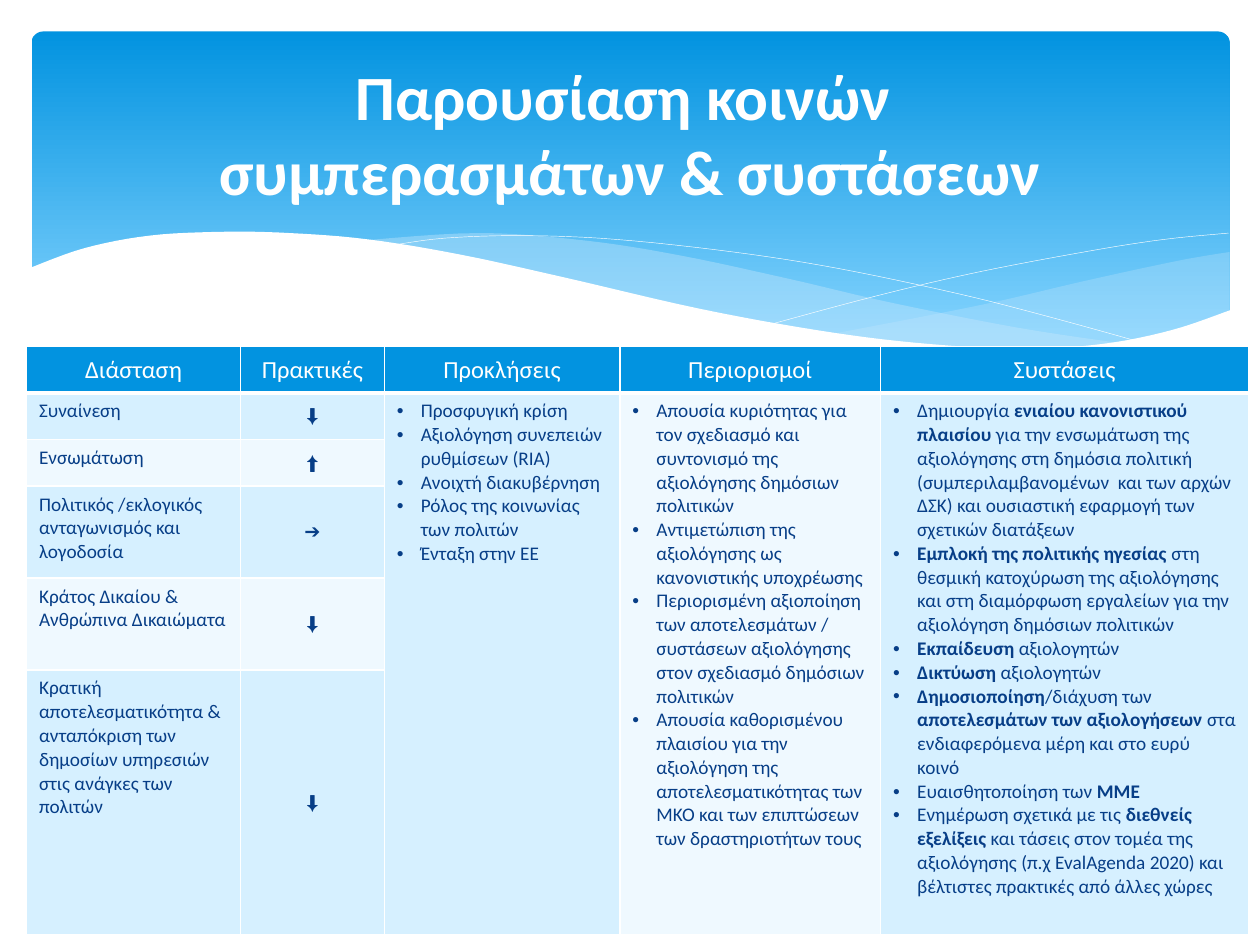
from typing import NamedTuple

from lxml import etree
from pptx import Presentation
from pptx.dml.color import RGBColor
from pptx.enum.shapes import MSO_SHAPE as Preset
from pptx.enum.text import MSO_ANCHOR as Anchor, PP_ALIGN as Align
from pptx.oxml.ns import qn
from pptx.util import Inches, Pt

FONT = "Calibri"
WHITE = RGBColor(0xFF, 0xFF, 0xFF)
BLUE = RGBColor(0x02, 0x93, 0xE0)
SKY = RGBColor(0x83, 0xD3, 0xFE)
MIST = RGBColor(0xC6, 0xE7, 0xFC)
NAVY = RGBColor(0x07, 0x3E, 0x87)
BAND = RGBColor(0xD6, 0xF0, 0xFF)
PALE_BAND = RGBColor(0xEF, 0xF9, 0xFF)

Curve = list[tuple[float, float]]


class Wave(NamedTuple):
    """Curves joined end to end; without a fill colour, a white hairline."""
    curves: list[Curve]
    fill: RGBColor | None = None
    opacity: int = 100


class Dimension(NamedTuple):
    name: str
    arrow: str
    height: float


class Topic(NamedTuple):
    """A bulleted column; ** switches bold on and off."""
    heading: str
    fill: RGBColor
    points: list[str]


WAVES = [
    Wave([[(9.76, 2), (9.35, 2.07), (8.61, 2.23), (7.79, 2.42), (6.61, 2.65)],
          [(6.61, 2.65), (7.19, 2.72), (7.69, 2.77), (8.24, 2.77), (8.81, 2.73),
           (9.28, 2.63), (9.76, 2.47)]], MIST, 29),
    Wave([[(8.93, 2.73), (8.07, 2.6), (7.06, 2.4), (6.29, 2.22), (5.41, 2.03),
           (4.65, 1.91), (3.8, 1.85), (2.86, 1.91)],
          [(2.86, 1.91), (3.62, 2.03), (4.49, 2.22), (5.66, 2.48), (6.65, 2.66),
           (7.48, 2.76), (8.18, 2.78), (8.93, 2.73)]], MIST, 40),
    Wave([[(3.09, 1.95), (3.53, 1.89), (4.16, 1.87), (4.89, 1.9), (5.82, 2),
           (6.65, 2.13), (7.6, 2.33), (8.31, 2.51), (9.07, 2.72)]]),
    Wave([[(6.13, 2.57), (6.95, 2.35), (7.76, 2.16), (8.66, 1.99), (9.24, 1.9),
           (9.75, 1.85)]]),
    Wave([[(9.77, 2.46), (9.3, 2.62), (8.75, 2.73), (8.09, 2.77), (7.26, 2.72),
           (6.48, 2.62), (5.55, 2.45), (4.47, 2.2), (3.65, 2.02), (2.92, 1.9),
           (2.3, 1.85), (1.77, 1.84), (1.19, 1.87), (0.67, 1.97), (0.23, 2.13)],
          [(0.23, 3.29), (9.77, 3.29)]], WHITE),
]

TABLE_LEFT, TABLE_TOP = 0.21, 2.75
HEADER_HEIGHT = 0.37
COLUMN_WIDTHS = [1.7, 1.14, 1.87, 2.07, 2.92]
DIMENSIONS = [
    Dimension("Συναίνεση", "⬇", 0.37),
    Dimension("Ενσωμάτωση", "⬆", 0.37),
    Dimension("Πολιτικός /εκλογικός ανταγωνισμός και λογοδοσία", "➔", 0.73),
    Dimension("Κράτος Δικαίου & Ανθρώπινα Δικαιώματα", "⬇", 0.73),
    Dimension("Κρατική αποτελεσματικότητα & ανταπόκριση των δημοσίων υπηρεσιών "
              "στις ανάγκες των πολιτών", "⬇", 2.1),
]
TOPICS = [
    Topic("Προκλήσεις", BAND, [
        "Προσφυγική κρίση",
        "Αξιολόγηση συνεπειών ρυθμίσεων (RIA)",
        "Ανοιχτή διακυβέρνηση",
        "Ρόλος της κοινωνίας των πολιτών",
        "Ένταξη στην ΕΕ",
    ]),
    Topic("Περιορισμοί", PALE_BAND, [
        "Απουσία κυριότητας για τον σχεδιασμό και συντονισμό της αξιολόγησης "
        "δημόσιων πολιτικών",
        "Αντιμετώπιση της αξιολόγησης ως κανονιστικής υποχρέωσης",
        "Περιορισμένη αξιοποίηση των αποτελεσμάτων / συστάσεων αξιολόγησης "
        "στον σχεδιασμό δημόσιων πολιτικών",
        "Απουσία καθορισμένου πλαισίου για την αξιολόγηση της "
        "αποτελεσματικότητας των ΜΚΟ και των επιπτώσεων των δραστηριοτήτων τους",
    ]),
    Topic("Συστάσεις", BAND, [
        "Δημιουργία **ενιαίου κανονιστικού πλαισίου** για την ενσωμάτωση της "
        "αξιολόγησης στη δημόσια πολιτική (συμπεριλαμβανομένων  και των αρχών "
        "ΔΣΚ) και ουσιαστική εφαρμογή των σχετικών διατάξεων",
        "**Εμπλοκή της πολιτικής ηγεσίας **στη θεσμική κατοχύρωση της "
        "αξιολόγησης και στη διαμόρφωση εργαλείων για την αξιολόγηση δημόσιων "
        "πολιτικών",
        "**Εκπαίδευση **αξιολογητών",
        "**Δικτύωση **αξιολογητών",
        "**Δημοσιοποίηση**/διάχυση των** αποτελεσμάτων των αξιολογήσεων **στα "
        "ενδιαφερόμενα μέρη και στο ευρύ κοινό",
        "Ευαισθητοποίηση των **ΜΜΕ**",
        "Ενημέρωση σχετικά με τις **διεθνείς εξελίξεις **και τάσεις στον τομέα "
        "της αξιολόγησης (π.χ EvalΑgenda 2020) και βέλτιστες πρακτικές από "
        "άλλες χώρες",
    ]),
]


def smooth(knots: Curve, steps: int = 6) -> Curve:
    """Catmull-Rom curve through the knots."""
    if len(knots) < 3:
        return knots
    padded = [knots[0], *knots, knots[-1]]
    curve = [knots[0]]
    for a, b, c, d in zip(padded, padded[1:], padded[2:], padded[3:]):
        for t in (step / steps for step in range(1, steps + 1)):
            curve.append(tuple(
                (2 * q + (r - p) * t + (2 * p - 5 * q + 4 * r - s) * t ** 2
                 + (3 * q - p - 3 * r + s) * t ** 3) / 2
                for p, q, r, s in zip(a, b, c, d)))
    return curve


def draw_wave(shapes, wave: Wave) -> None:
    outline = [(Inches(x), Inches(y))
               for curve in wave.curves for x, y in smooth(curve)]
    builder = shapes.build_freeform(*outline[0])
    builder.add_line_segments(outline[1:], close=wave.fill is not None)
    shape = builder.convert_to_shape()
    shape.shadow.inherit = False
    if wave.fill is None:
        shape.fill.background()
        shape.line.color.rgb = WHITE
        shape.line.width = Pt(0.25)
        return
    shape.line.fill.background()
    shape.fill.solid()
    shape.fill.fore_color.rgb = wave.fill
    if wave.opacity < 100:
        color = shape._element.spPr.find(".//" + qn("a:srgbClr"))
        etree.SubElement(color, qn("a:alpha"), val=str(wave.opacity * 1000))


def draw_banner(shapes) -> None:
    banner = shapes.add_shape(Preset.ROUNDED_RECTANGLE, Inches(0.25), Inches(0.25),
                              Inches(9.51), Inches(2.7))
    banner.adjustments[0] = 0.034
    banner.shadow.inherit = False
    banner.line.fill.background()
    banner.fill.gradient()
    banner.fill.gradient_angle = 270
    for stop, color, position in zip(banner.fill.gradient_stops, (BLUE, SKY), (0, 0.9)):
        stop.color.rgb = color
        stop.position = position


def style_cell(cell, fill: RGBColor, bottom: float = 1) -> None:
    """White borders first, since the schema wants them before the fill."""
    properties = cell._tc.get_or_add_tcPr()
    for side, width in (("lnL", 1), ("lnR", 1), ("lnT", 1), ("lnB", bottom)):
        border = etree.SubElement(properties, qn("a:" + side), w=str(Pt(width)))
        solid = etree.SubElement(border, qn("a:solidFill"))
        etree.SubElement(solid, qn("a:srgbClr"), val=str(WHITE))
    cell.fill.solid()
    cell.fill.fore_color.rgb = fill


def write_cell(cell, points: list[str], size: float = 11, color: RGBColor = NAVY,
               centered: bool = False, bulleted: bool = False) -> None:
    cell.vertical_anchor = Anchor.MIDDLE if centered else Anchor.TOP
    for index, point in enumerate(points):
        frame = cell.text_frame
        paragraph = frame.add_paragraph() if index else frame.paragraphs[0]
        paragraph.alignment = Align.CENTER if centered else Align.LEFT
        if bulleted:
            layout = paragraph._p.get_or_add_pPr()
            layout.set("marL", str(Inches(0.19)))
            layout.set("indent", str(-Inches(0.19)))
            etree.SubElement(layout, qn("a:buFont"), typeface="Arial")
            etree.SubElement(layout, qn("a:buChar"), char="•")
        font = paragraph.font
        font.name, font.size, font.bold = FONT, Pt(size), False
        font.color.rgb = color
        for part, text in enumerate(point.split("**")):
            if text:
                run = paragraph.add_run()
                run.text = text
                run.font.bold = part % 2 == 1


def draw_table(shapes) -> None:
    heights = [HEADER_HEIGHT] + [dimension.height for dimension in DIMENSIONS]
    table = shapes.add_table(len(heights), len(COLUMN_WIDTHS), Inches(TABLE_LEFT),
                             Inches(TABLE_TOP), Inches(sum(COLUMN_WIDTHS)),
                             Inches(sum(heights))).table
    for column, width in zip(table.columns, COLUMN_WIDTHS):
        column.width = Inches(width)
    for row, height in zip(table.rows, heights):
        row.height = Inches(height)

    headings = ["Διάσταση", "Πρακτικές"] + [topic.heading for topic in TOPICS]
    for column, heading in enumerate(headings):
        style_cell(table.cell(0, column), BLUE, bottom=3)
        write_cell(table.cell(0, column), [heading], 14, WHITE, centered=True)
    for row, dimension in enumerate(DIMENSIONS, 1):
        name, arrow = table.cell(row, 0), table.cell(row, 1)
        for cell in (name, arrow):
            style_cell(cell, BAND if row % 2 else PALE_BAND)
        write_cell(name, [dimension.name])
        write_cell(arrow, [dimension.arrow], centered=True)
    for column, topic in enumerate(TOPICS, 2):
        for row in range(1, len(heights)):
            style_cell(table.cell(row, column), topic.fill)
        top = table.cell(1, column)
        top.merge(table.cell(len(DIMENSIONS), column))
        write_cell(top, topic.points, bulleted=True)


def place_title(slide) -> None:
    title = slide.shapes.title
    slide.shapes._spTree.append(title._element)  # in front of the banner
    title.left, title.top = Inches(0.5), Inches(0.37)
    title.width, title.height = Inches(9), Inches(1.37)
    title.text_frame.text = "Παρουσίαση κοινών \vσυμπερασμάτων & συστάσεων"
    title.text_frame.vertical_anchor = Anchor.MIDDLE
    heading = title.text_frame.paragraphs[0]
    heading.alignment = Align.CENTER
    heading.font.name, heading.font.size, heading.font.bold = FONT, Pt(36), True
    heading.font.color.rgb = WHITE


def main() -> None:
    deck = Presentation()
    deck.slide_width, deck.slide_height = Inches(10), Inches(7.5)
    slide = deck.slides.add_slide(deck.slide_layouts[5])
    draw_banner(slide.shapes)
    for wave in WAVES:
        draw_wave(slide.shapes, wave)
    draw_table(slide.shapes)
    place_title(slide)
    deck.save("out.pptx")


if __name__ == "__main__":
    main()
